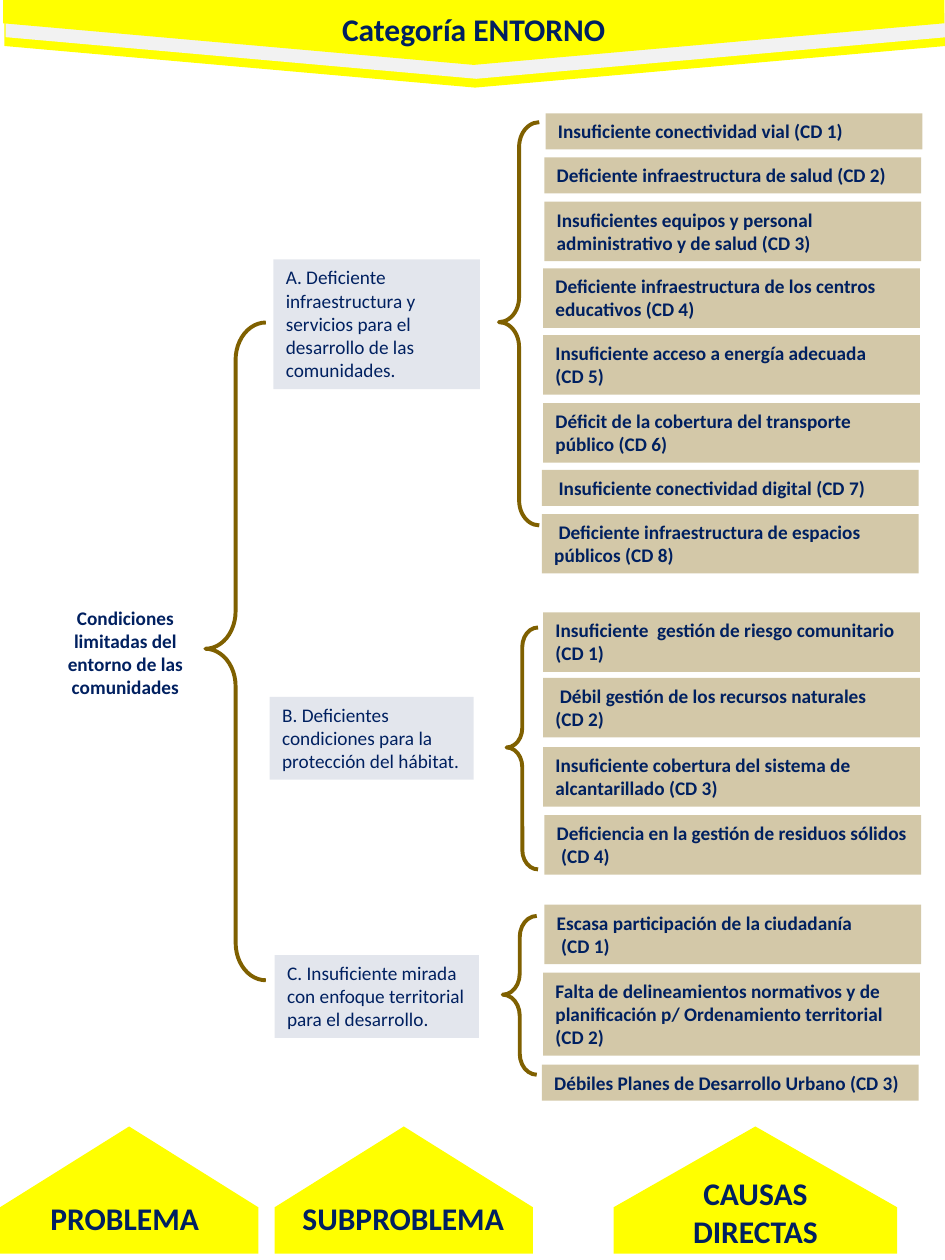
"""Build the problem tree slide for the category ENTORNO."""
import pptx
import pptx.dml.color
import pptx.enum.shapes
import pptx.enum.text
import pptx.oxml
import pptx.oxml.ns
import pptx.util
from pptx.util import Inches

NAVY = pptx.dml.color.RGBColor(0x00, 0x20, 0x60)
BROWN = pptx.dml.color.RGBColor(0x7F, 0x60, 0x00)
YELLOW = pptx.dml.color.RGBColor(0xFF, 0xFF, 0x00)
PALE_GRAY = pptx.dml.color.RGBColor(0xF2, 0xF2, 0xF2)

PRESET = pptx.enum.shapes.MSO_SHAPE
CENTER = pptx.enum.text.PP_ALIGN.CENTER
LEFT = pptx.enum.text.PP_ALIGN.LEFT

BODY = {"name": "Calibri", "size": pptx.util.Pt(11), "bold": False}
STRONG = {**BODY, "bold": True}
HEADING = {**STRONG, "size": pptx.util.Pt(18)}
FRAME = {
    "word_wrap": True,
    "vertical_anchor": pptx.enum.text.MSO_ANCHOR.TOP,
    "margin_left": Inches(0.1),
    "margin_right": Inches(0.1),
    "margin_top": Inches(0.05),
    "margin_bottom": Inches(0.05),
}

BANDS = [
    (3.51, -3.3, YELLOW),
    (3.52, -3.37, PALE_GRAY),
    (3.5, -3.48, YELLOW),
]
POINTERS = [(0.52, 8.42, 2.05), (2.7, 8.42, 2.05), (5.49, 8.32, 2.25)]
BRACES = [
    (1.63, 2.56, 0.48, 5.22),
    (3.96, 0.97, 0.32, 3.2),
    (4.02, 4.98, 0.25, 1.92),
    (3.99, 7.27, 0.27, 1.26),
]
LABELS = [
    (1.72, 0.03, 4.08, 0.4, "Categoría ENTORNO", HEADING),
    (0.24, 4.76, 1.51, 0.84, "Condiciones limitadas del entorno de las comunidades", STRONG),
    (0.14, 9.47, 1.7, 0.4, "PROBLEMA", HEADING),
    (2.24, 9.47, 1.92, 0.4, "SUBPROBLEMA", HEADING),
    (5.27, 9.27, 1.45, 0.71, "CAUSAS DIRECTAS", HEADING),
]
SUBPROBLEMS = [
    (2.17, 2.06, 1.64, 5,
     "A. Deficiente infraestructura y servicios para el desarrollo de las comunidades."),
    (2.14, 5.53, 1.62, 3, "B. Deficientes condiciones para la protección del hábitat."),
    (2.18, 7.58, 1.62, 3,
     "C. Insuficiente mirada con enfoque territorial para el desarrollo."),
]
CAUSES = [
    (4.33, 0.9, 1, "Insuficiente conectividad vial (CD 1)"),
    (4.32, 1.25, 1, "Deficiente infraestructura de salud (CD 2)"),
    (4.32, 1.6, 2, "Insuficientes equipos y personal administrativo y de salud (CD 3)"),
    (4.31, 2.13, 2, "Deficiente infraestructura de los centros educativos (CD 4)"),
    (4.31, 2.66, 2, "Insuficiente acceso a energía adecuada\n(CD 5)"),
    (4.31, 3.2, 2, "Déficit de la cobertura del transporte público (CD 6)"),
    (4.3, 3.73, 1, " Insuficiente conectividad digital (CD 7)"),
    (4.3, 4.08, 2, " Deficiente infraestructura de espacios públicos (CD 8)"),
    (4.31, 4.86, 2, "Insuficiente  gestión de riesgo comunitario (CD 1)"),
    (4.31, 5.38, 2, " Débil gestión de los recursos naturales\n(CD 2)"),
    (4.31, 5.93, 2, "Insuficiente cobertura del sistema de alcantarillado (CD 3)"),
    (4.32, 6.47, 2, "Deficiencia en la gestión de residuos sólidos\n (CD 4)"),
    (4.32, 7.18, 2, "Escasa participación de la ciudadanía\n (CD 1)"),
    (4.31, 7.72, 3,
     "Falta de delineamientos normativos y de planificación p/ Ordenamiento territorial (CD 2)"),
    (4.3, 8.45, 1, "Débiles Planes de Desarrollo Urbano (CD 3)"),
]


def apply_format(target, values):
    for attribute, value in values.items():
        setattr(target, attribute, value)


def write_text(frame, text, font_values, alignment):
    apply_format(frame, FRAME)
    frame.text = text
    for paragraph in frame.paragraphs:
        paragraph.alignment = alignment
        for run in paragraph.runs:
            apply_format(run.font, font_values)
            run.font.color.rgb = NAVY


def add_preset(slide, preset, left, top, width, height):
    element = slide.shapes.add_shape(
        preset, Inches(left), Inches(top), Inches(width), Inches(height))
    element.shadow.inherit = False
    return element


def add_arrow(slide, left, top, width, height, rotation, color):
    arrow = add_preset(slide, PRESET.RIGHT_ARROW, left, top, width, height)
    arrow.rotation = rotation
    arrow.adjustments[0] = 1
    arrow.adjustments[1] = 0.635
    arrow.fill.solid()
    arrow.fill.fore_color.rgb = color
    arrow.line.fill.background()


def add_brace(slide, left, top, width, height):
    brace = add_preset(slide, PRESET.LEFT_BRACE, left, top, width, height)
    brace.adjustments[0] = 0.619
    brace.adjustments[1] = 0.496
    brace.fill.background()
    brace.line.color.rgb = BROWN
    brace.line.width = pptx.util.Pt(2.25)


def add_box(slide, left, top, width, line_count, text, font_values, color, opacity):
    height = 0.1 + 0.186 * line_count
    box = add_preset(slide, PRESET.RECTANGLE, left, top, width, height)
    box.fill.solid()
    box.fill.fore_color.rgb = color
    box.line.fill.background()
    color_node = box.fill._xPr.find(pptx.oxml.ns.qn("a:solidFill"))[0]
    alpha = pptx.oxml.parse_xml(
        f'<a:alpha {pptx.oxml.ns.nsdecls("a")} val="{opacity * 1000}"/>')
    color_node.append(alpha)
    write_text(box.text_frame, text, font_values, LEFT)


def add_label(slide, left, top, width, height, text, font_values):
    label = slide.shapes.add_textbox(
        Inches(left), Inches(top), Inches(width), Inches(height))
    write_text(label.text_frame, text, font_values, CENTER)


def main():
    deck = pptx.Presentation()
    deck.slide_width = Inches(7.5)
    deck.slide_height = Inches(10)
    slide = deck.slides.add_slide(deck.slide_layouts[6])

    for left, top, color in BANDS:
        add_arrow(slide, left, top, 0.52, 7.47, 90, color)
    for left, top, breadth in POINTERS:
        add_arrow(slide, left, top, 1.01, breadth, 270, YELLOW)
    for left, top, width, line_count, text in SUBPROBLEMS:
        add_box(slide, left, top, width, line_count, text, BODY, NAVY, 11)
    for left, top, line_count, text in CAUSES:
        add_box(slide, left, top, 2.99, line_count, text, STRONG, BROWN, 34)
    for brace in BRACES:
        add_brace(slide, *brace)
    for label in LABELS:
        add_label(slide, *label)

    deck.save("out.pptx")


if __name__ == "__main__":
    main()
